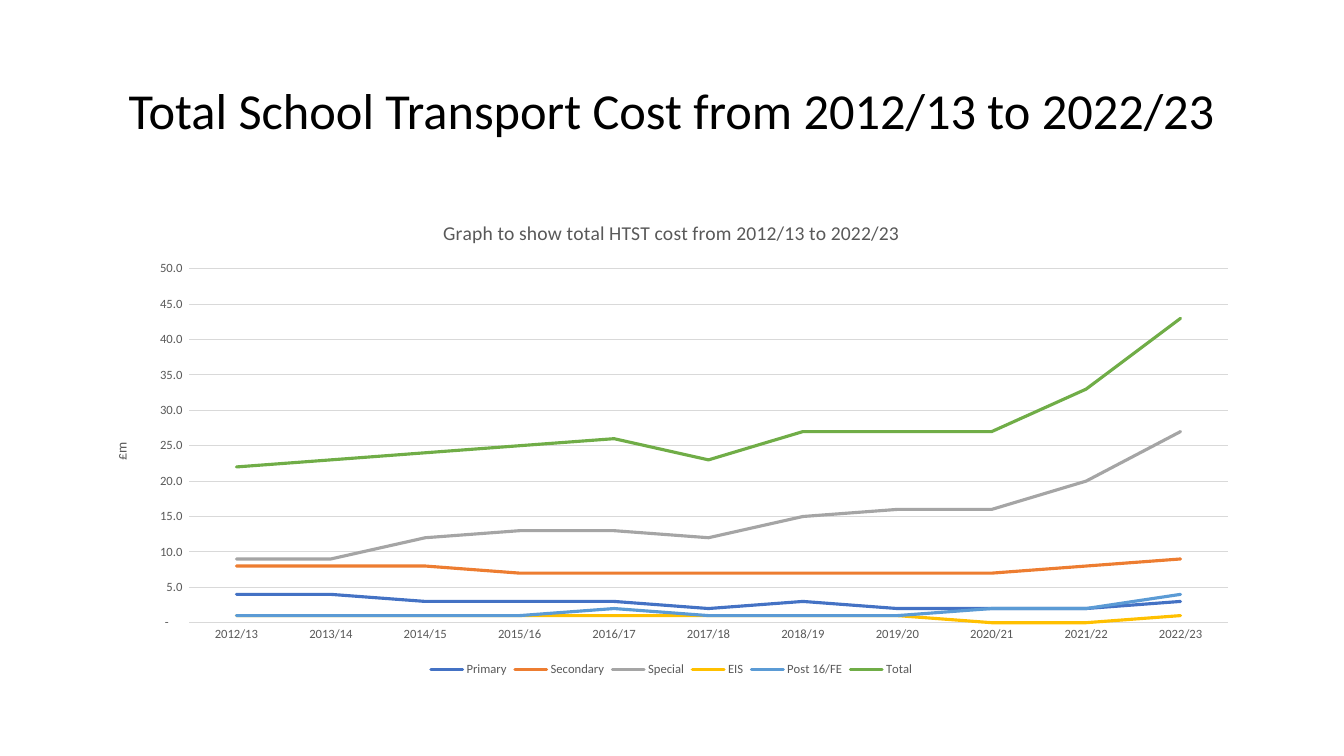
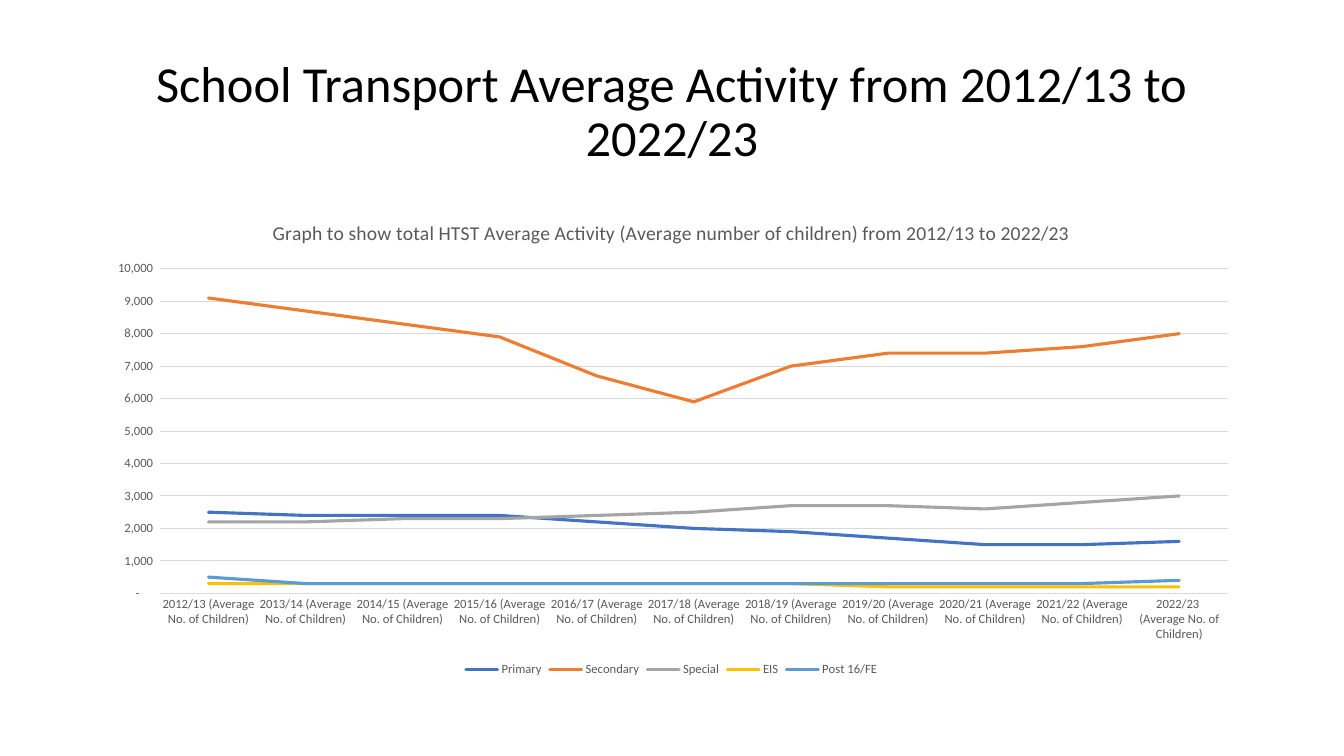
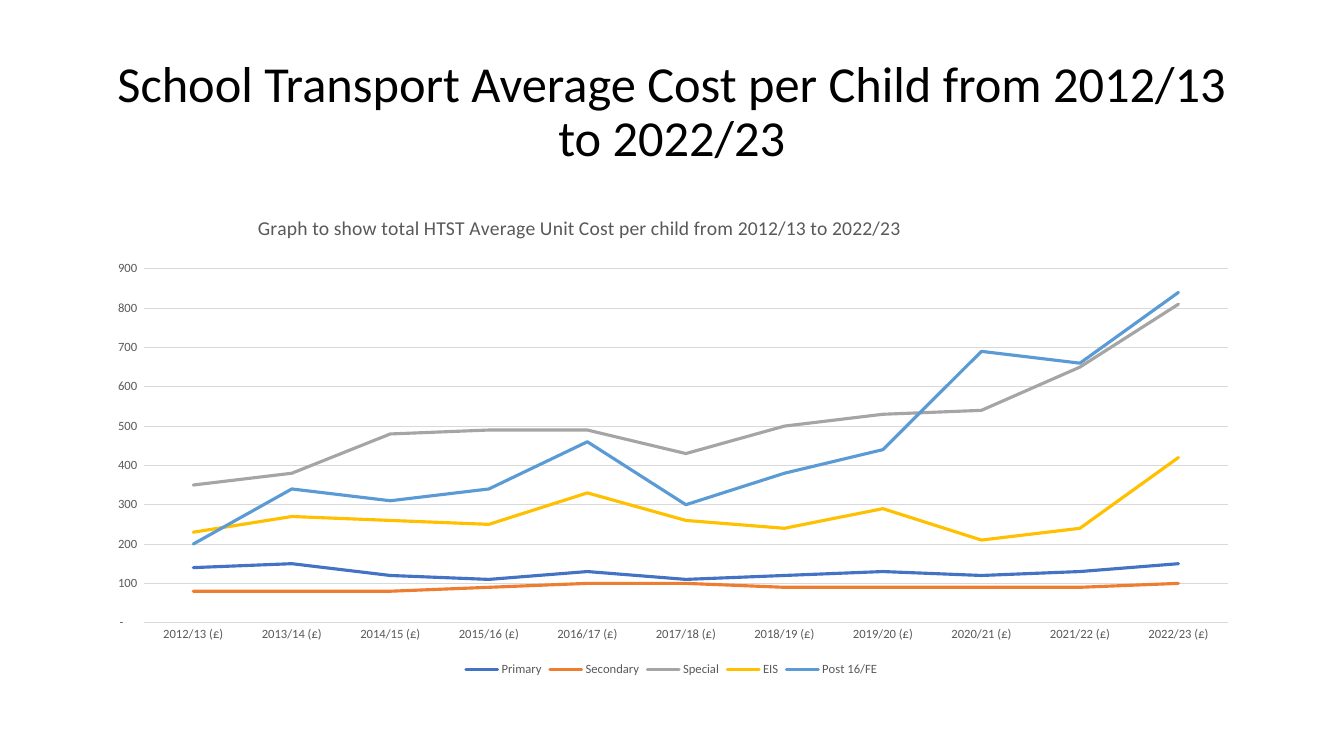
import pptx
import pptx.chart.data
import pptx.dml.color
import pptx.enum.chart
import pptx.enum.text
import pptx.util
import lxml.etree

EMU_PER_PX = 914400 / 100.8
SLIDE_SIZE = (1344, 756)
TITLE_BOX = (92, 40, 1160, 146)
CHART_BOX = (92, 201, 1159, 480)

FONT = "Calibri"
BLACK = pptx.dml.color.RGBColor(0x00, 0x00, 0x00)
GREY_TEXT = pptx.dml.color.RGBColor(0x59, 0x59, 0x59)
GREY_LINE = pptx.dml.color.RGBColor(0xD9, 0xD9, 0xD9)
SERIES_COLOURS = {
    "Primary": pptx.dml.color.RGBColor(0x44, 0x72, 0xC4),
    "Secondary": pptx.dml.color.RGBColor(0xED, 0x7D, 0x31),
    "Special": pptx.dml.color.RGBColor(0xA5, 0xA5, 0xA5),
    "EIS": pptx.dml.color.RGBColor(0xFF, 0xC0, 0x00),
    "Post 16/FE": pptx.dml.color.RGBColor(0x5B, 0x9B, 0xD5),
    "Total": pptx.dml.color.RGBColor(0x70, 0xAD, 0x47),
}

# Font styles: size in points and colour
SLIDE_TITLE = {"size": 36, "color": BLACK}
CHART_BASE = {"size": 10, "color": BLACK}
CHART_TITLE = {"size": 14, "color": GREY_TEXT}
AXIS_TITLE = {"size": 10, "color": GREY_TEXT}
LABELS = {"size": 9, "color": GREY_TEXT}

YEARS = [f"20{year}/{year + 1}" for year in range(12, 23)]
MILLIONS = '_-* #,##0.0_-;\\-* #,##0.0_-;_-* "-"??_-;_-@_-'
WHOLE = '_-* #,##0_-;\\-* #,##0_-;_-* "-"??_-;_-@_-'

TOTAL_COST = {
    "Primary": [4, 4, 3, 3, 3, 2, 3, 2, 2, 2, 3],
    "Secondary": [8, 8, 8, 7, 7, 7, 7, 7, 7, 8, 9],
    "Special": [9, 9, 12, 13, 13, 12, 15, 16, 16, 20, 27],
    "EIS": [1, 1, 1, 1, 1, 1, 1, 1, 0, 0, 1],
    "Post 16/FE": [1, 1, 1, 1, 2, 1, 1, 1, 2, 2, 4],
    "Total": [22, 23, 24, 25, 26, 23, 27, 27, 27, 33, 43],
}
ACTIVITY = {
    "Primary": [2500, 2400, 2400, 2400, 2200, 2000, 1900, 1700, 1500, 1500, 1600],
    "Secondary": [9100, 8700, 8300, 7900, 6700, 5900, 7000, 7400, 7400, 7600, 8000],
    "Special": [2200, 2200, 2300, 2300, 2400, 2500, 2700, 2700, 2600, 2800, 3000],
    "EIS": [300, 300, 300, 300, 300, 300, 300, 200, 200, 200, 200],
    "Post 16/FE": [500, 300, 300, 300, 300, 300, 300, 300, 300, 300, 400],
}
UNIT_COST = {
    "Primary": [140, 150, 120, 110, 130, 110, 120, 130, 120, 130, 150],
    "Secondary": [80, 80, 80, 90, 100, 100, 90, 90, 90, 90, 100],
    "Special": [350, 380, 480, 490, 490, 430, 500, 530, 540, 650, 810],
    "EIS": [230, 270, 260, 250, 330, 260, 240, 290, 210, 240, 420],
    "Post 16/FE": [200, 340, 310, 340, 460, 300, 380, 440, 690, 660, 840],
}


def px(length):
    return pptx.util.Emu(round(length * EMU_PER_PX))


def set_attributes(target, values):
    for name, value in values.items():
        setattr(target, name, value)


def style_font(font, style):
    set_attributes(font, {"name": FONT, "size": pptx.util.Pt(style["size"]), "bold": False})
    font.color.rgb = style["color"]


def style_line(line, colour, width):
    line.color.rgb = colour
    line.width = pptx.util.Pt(width)


def write_text(frame, text, style):
    """Fill the first paragraph with one styled run and return the paragraph."""
    paragraph = frame.paragraphs[0]
    run = paragraph.add_run()
    run.text = text
    style_font(run.font, style)
    return paragraph


def add_title(slide, text):
    frame = slide.shapes.add_textbox(*map(px, TITLE_BOX)).text_frame
    set_attributes(frame, {
        "word_wrap": True,
        "vertical_anchor": pptx.enum.text.MSO_ANCHOR.MIDDLE,
    })
    set_attributes(write_text(frame, text, SLIDE_TITLE), {
        "alignment": pptx.enum.text.PP_ALIGN.CENTER,
        "line_spacing": 0.9,
    })


def place_chart_title(chart, x, y):
    """Fix the chart title's corner, as fractions of the chart."""
    namespace = "http://schemas.openxmlformats.org/drawingml/2006/chart"
    title = chart.chart_title._element
    layout = title.find(f"{{{namespace}}}layout")
    if layout is None:
        layout = lxml.etree.Element(f"{{{namespace}}}layout")
        title.find(f"{{{namespace}}}tx").addnext(layout)
    manual = lxml.etree.SubElement(layout, f"{{{namespace}}}manualLayout")
    for tag, value in {"xMode": "edge", "yMode": "edge", "x": x, "y": y}.items():
        lxml.etree.SubElement(manual, f"{{{namespace}}}{tag}").set("val", str(value))


def round_line_ends(series):
    for outline in series._element.iter("{*}ln"):
        outline.set("cap", "rnd")


def style_axes(chart, number_format, value_title):
    no_ticks = {
        "major_tick_mark": pptx.enum.chart.XL_TICK_MARK.NONE,
        "minor_tick_mark": pptx.enum.chart.XL_TICK_MARK.NONE,
        "has_title": False,
    }
    years, values = chart.category_axis, chart.value_axis
    for axis in (years, values):
        set_attributes(axis, no_ticks)
        style_font(axis.tick_labels.font, LABELS)
    style_line(years.format.line, GREY_LINE, 0.75)
    values.format.line.fill.background()
    style_line(values.major_gridlines.format.line, GREY_LINE, 0.75)
    set_attributes(values.tick_labels, {
        "number_format": number_format,
        "number_format_is_linked": False,
    })
    if value_title:
        write_text(values.axis_title.text_frame, value_title, AXIS_TITLE)


def add_line_chart(slide, heading, categories, series, number_format,
                   value_title=None, heading_at=None):
    data = pptx.chart.data.CategoryChartData(number_format=number_format)
    data.categories = categories
    for name, values in series.items():
        data.add_series(name, values)
    chart = slide.shapes.add_chart(
        pptx.enum.chart.XL_CHART_TYPE.LINE, *map(px, CHART_BOX), data).chart
    style_font(chart.font, CHART_BASE)

    # Heading
    write_text(chart.chart_title.text_frame, heading, CHART_TITLE)
    if heading_at:
        place_chart_title(chart, *heading_at)

    # Legend
    chart.has_legend = True
    set_attributes(chart.legend, {
        "position": pptx.enum.chart.XL_LEGEND_POSITION.BOTTOM,
        "include_in_layout": False,
    })
    style_font(chart.legend.font, LABELS)

    # Axes and lines
    style_axes(chart, number_format, value_title)
    chart.plots[0].vary_by_categories = False
    for line in chart.plots[0].series:
        line.smooth = False
        style_line(line.format.line, SERIES_COLOURS[line.name], 2.25)
        round_line_ends(line)


def main():
    deck = pptx.Presentation()
    deck.slide_width, deck.slide_height = map(px, SLIDE_SIZE)
    children = [f"{year} (Average No. of Children)" for year in YEARS[:-1]]
    children.append(f"{YEARS[-1]}  (Average No. of Children)")
    pages = [
        ("Total School Transport Cost from 2012/13 to 2022/23", {
            "heading": "Graph to show total HTST cost from 2012/13 to 2022/23",
            "categories": YEARS, "series": TOTAL_COST,
            "number_format": MILLIONS, "value_title": "£m"}),
        ("School Transport Average Activity from 2012/13 to 2022/23", {
            "heading": "Graph to show total HTST Average Activity "
                       "(Average number of children) from 2012/13 to 2022/23",
            "categories": children, "series": ACTIVITY, "number_format": WHOLE}),
        ("School Transport Average Cost per Child from 2012/13 to 2022/23", {
            "heading": "Graph to show total HTST Average Unit Cost per child "
                       "from 2012/13 to 2022/23",
            "categories": [f"{year} (£)" for year in YEARS], "series": UNIT_COST,
            "number_format": WHOLE, "heading_at": (0.14, 0.02)}),
    ]
    for title, chart in pages:
        slide = deck.slides.add_slide(deck.slide_layouts[6])
        add_title(slide, title)
        add_line_chart(slide, **chart)
    deck.save("out.pptx")


if __name__ == "__main__":
    main()
